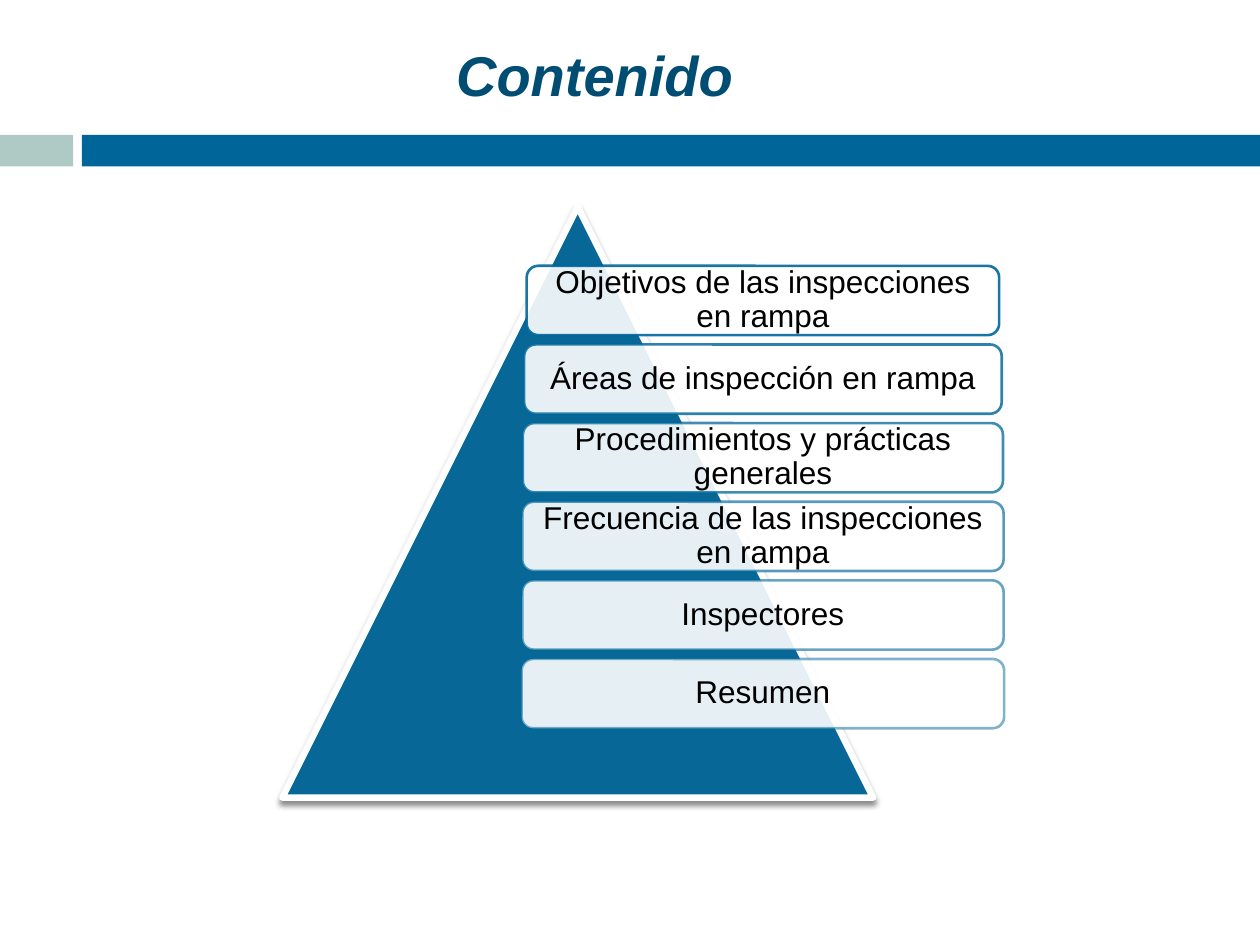
"""Build the contents slide: a pyramid with six topic cards."""
from dataclasses import dataclass
from typing import Any

from lxml.etree import SubElement
from pptx import Presentation
from pptx.dml.color import RGBColor
from pptx.enum.shapes import MSO_SHAPE
from pptx.enum.text import MSO_ANCHOR, PP_ALIGN
from pptx.oxml.ns import qn
from pptx.util import Inches, Pt

BLUE = "006699"
WHITE = "FFFFFF"
CARD_CENTER = 6.055
CARD_TOP = 2.11
CARD_HEIGHT = 0.55
CARD_PITCH = 0.624
CARD_INSET = 0.07
FRAME_FORMAT = {
    "word_wrap": True,
    "vertical_anchor": MSO_ANCHOR.MIDDLE,
    **{f"margin_{side}": Inches(CARD_INSET) for side in ("left", "top", "right", "bottom")},
}
CARD_FONT = {"name": "Arial", "size": Pt(18)}
TITLE_FONT = {"name": "Arial", "size": Pt(32), "bold": True, "italic": True}


@dataclass(frozen=True)
class Box:
    left: float
    top: float
    width: float
    height: float

    def lengths(self) -> tuple:
        return tuple(Inches(value) for value in (self.left, self.top, self.width, self.height))


@dataclass(frozen=True)
class Card:
    text: str
    width: float


CARDS = [
    Card("Objetivos de las inspecciones en rampa", 3.75),
    Card("Áreas de inspección en rampa", 3.79),
    Card("Procedimientos y prácticas generales", 3.81),
    Card("Frecuencia de las inspecciones en rampa", 3.82),
    Card("Inspectores", 3.82),
    Card("Resumen", 3.83),
]


def apply_format(target: Any, values: dict) -> None:
    for name, value in values.items():
        setattr(target, name, value)


def set_color(color_format: Any, color: str) -> None:
    color_format.rgb = RGBColor.from_string(color)


def set_opacity(color_element: Any, percent: int) -> None:
    SubElement(color_element, qn("a:alpha")).set("val", str(percent * 1000))


def add_filled_shape(slide: Any, kind: Any, box: Box, fill: str, opacity: int = 100) -> Any:
    shape = slide.shapes.add_shape(kind, *box.lengths())
    shape.shadow.inherit = False
    shape.fill.solid()
    set_color(shape.fill.fore_color, fill)
    if opacity < 100:
        set_opacity(shape._element.spPr.find(f"{qn('a:solidFill')}/{qn('a:srgbClr')}"), opacity)
    shape.line.fill.background()
    return shape


def set_outline(shape: Any, color: str, width: float, opacity: int = 100) -> None:
    shape.line.width = Pt(width)
    shape.line.fill.solid()
    set_color(shape.line.fill.fore_color, color)
    if opacity < 100:
        set_opacity(next(shape.line._ln.iter(qn("a:srgbClr"))), opacity)


def write_text(shape: Any, text: str, font: dict, color: str) -> Any:
    shape.text_frame.text = text
    paragraph = shape.text_frame.paragraphs[0]
    paragraph.alignment = PP_ALIGN.CENTER
    run = paragraph.runs[0]
    apply_format(run.font, font)
    set_color(run.font.color, color)
    return paragraph


def add_title(slide: Any, text: str, box: Box) -> None:
    title = slide.shapes.title
    apply_format(title, dict(zip(("left", "top", "width", "height"), box.lengths())))
    write_text(title, text, TITLE_FONT, "004D73")
    title.text_frame.vertical_anchor = MSO_ANCHOR.MIDDLE


def add_pyramid(slide: Any, box: Box) -> None:
    pyramid = add_filled_shape(slide, MSO_SHAPE.ISOSCELES_TRIANGLE, box, BLUE, 90 + 5)
    set_outline(pyramid, WHITE, 3.75)
    effects = pyramid._element.spPr.find(qn("a:effectLst"))
    shadow = SubElement(effects, qn("a:outerShdw"))
    settings = {"blurRad": Pt(3), "dist": Pt(2.4), "dir": 90 * 60000, "rotWithShape": 0}
    for name, value in settings.items():
        shadow.set(name, str(int(value)))
    color = SubElement(shadow, qn("a:srgbClr"))
    color.set("val", "000000")
    set_opacity(color, 45)


def add_card(slide: Any, card: Card, position: int) -> None:
    top = CARD_TOP + position * CARD_PITCH
    box = Box(CARD_CENTER - card.width / 2, top, card.width, CARD_HEIGHT)
    shape = add_filled_shape(slide, MSO_SHAPE.ROUNDED_RECTANGLE, box, WHITE, 90)
    set_outline(shape, BLUE, 1.5, 90 - 8 * position)
    apply_format(shape.text_frame, FRAME_FORMAT)
    write_text(shape, card.text, CARD_FONT, "000000").line_spacing = 0.9


def main() -> None:
    presentation = Presentation()
    presentation.slide_width = Inches(10)
    presentation.slide_height = Inches(7.5)
    slide = presentation.slides.add_slide(presentation.slide_layouts[5])
    add_filled_shape(slide, MSO_SHAPE.RECTANGLE, Box(0, 1.07, 0.58, 0.25), "AFCAC4")
    add_filled_shape(slide, MSO_SHAPE.RECTANGLE, Box(0.65, 1.07, 9.35, 0.25), BLUE)
    add_title(slide, "Contenido", Box(0.26, 0.25, 8.92, 0.67))
    add_pyramid(slide, Box(2.24, 1.64, 4.69, 4.69))
    for position, card in enumerate(CARDS):
        add_card(slide, card, position)
    presentation.save("out.pptx")


if __name__ == "__main__":
    main()
